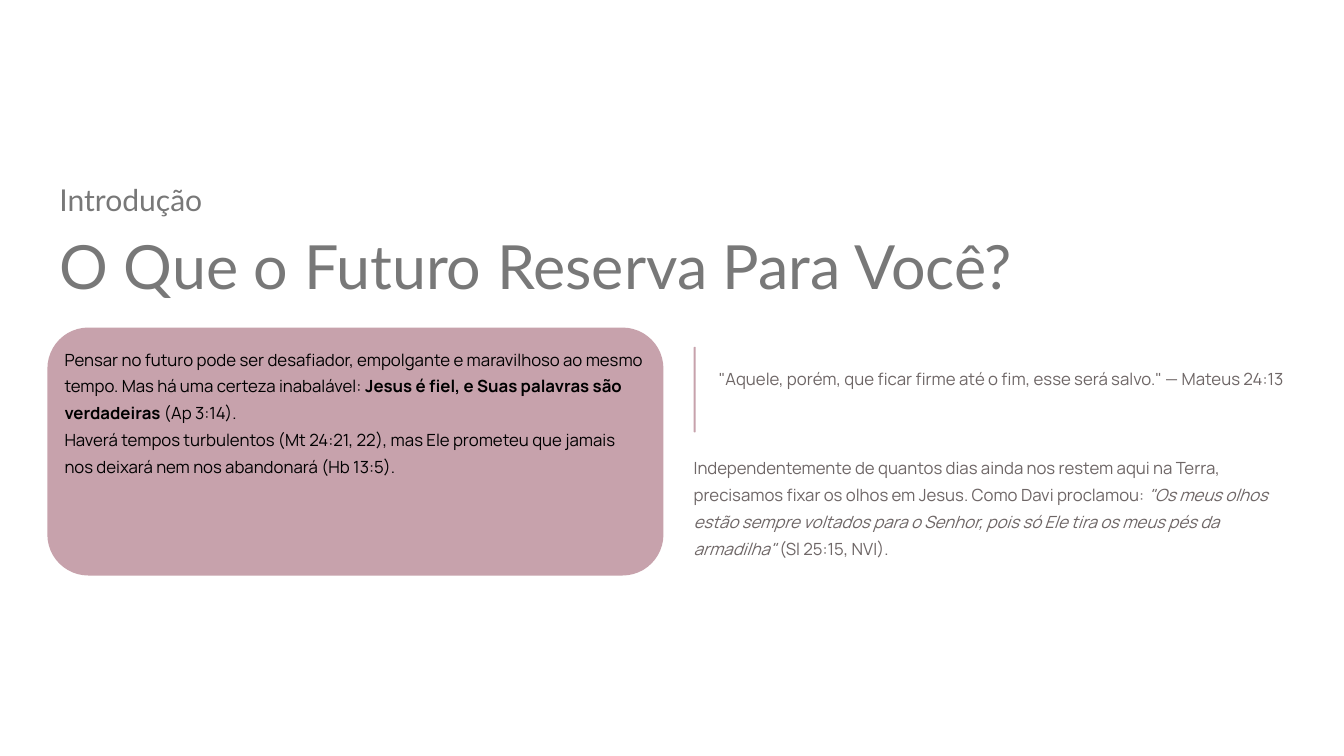
"""Build the introduction slide about what the future holds."""
from pptx import Presentation
from pptx.dml.color import RGBColor
from pptx.enum import shapes, text
from pptx.util import Inches, Pt

WHITE = RGBColor(0xFF, 0xFF, 0xFF)
BLACK = RGBColor(0x00, 0x00, 0x00)
ROSE = RGBColor(0xC7, 0xA2, 0xAC)
HEADING_GRAY = RGBColor(0x78, 0x78, 0x78)
BODY_GRAY = RGBColor(0x6E, 0x66, 0x66)

FRAME_FORMAT = {
    "margin_left": 0, "margin_top": 0, "margin_right": 0, "margin_bottom": 0,
    "word_wrap": True, "auto_size": text.MSO_AUTO_SIZE.NONE,
    "vertical_anchor": text.MSO_ANCHOR.TOP,
}
BODY_FONT = {"name": "Manrope", "size": Pt(12)}

CARD_PARAGRAPHS = [
    [("Pensar no futuro pode ser desafiador, empolgante e maravilhoso ao mesmo "
      "tempo. Mas há uma certeza inabalável: ", {}),
     ("Jesus é fiel, e Suas palavras são verdadeiras", {"bold": True}),
     (" (Ap 3:14).", {})],
    [("Haverá tempos turbulentos (Mt 24:21, 22), mas Ele prometeu que jamais "
      "nos deixará nem nos abandonará (Hb 13:5).", {})],
]
QUOTE_PARAGRAPHS = [
    [('"Aquele, porém, que ficar firme até o fim, esse será salvo." '
      "— Mateus 24:13", {})],
]
CLOSING_PARAGRAPHS = [
    [("Independentemente de quantos dias ainda nos restem aqui na Terra, "
      "precisamos fixar os olhos em Jesus. Como Davi proclamou: ", {}),
     ('"Os meus olhos estão sempre voltados para o Senhor, pois só Ele tira '
      'os meus pés da armadilha"', {"italic": True}),
     (" (Sl 25:15, NVI).", {})],
]


def apply_format(target, values):
    """Set each named attribute on the target."""
    for name, value in values.items():
        setattr(target, name, value)


def box(left, top, width, height):
    """Convert a box in inches to lengths."""
    return [Inches(value) for value in (left, top, width, height)]


def write_text(shape, paragraphs, font, color, line_spacing):
    """Fill a shape with left-aligned paragraphs of formatted runs."""
    frame = shape.text_frame
    apply_format(frame, FRAME_FORMAT)
    for index, runs in enumerate(paragraphs):
        paragraph = frame.add_paragraph() if index else frame.paragraphs[0]
        apply_format(paragraph, {"alignment": text.PP_ALIGN.LEFT,
                                 "line_spacing": line_spacing,
                                 "space_before": Pt(0)})
        for words, emphasis in runs:
            run = paragraph.add_run()
            run.text = words
            apply_format(run.font, {**font, **emphasis})
            run.font.color.rgb = color


def add_title(slide, words, position):
    """Place and format the title placeholder."""
    title = slide.shapes.title
    apply_format(title, dict(zip(("left", "top", "width", "height"), box(*position))))
    write_text(title, [[(words, {})]], {"name": "Lato", "size": Pt(43.5)},
               HEADING_GRAY, 1.04)


def add_text(slide, position, paragraphs, font=BODY_FONT, color=BODY_GRAY,
             line_spacing=1.33):
    """Add a text box."""
    shape = slide.shapes.add_textbox(*box(*position))
    write_text(shape, paragraphs, font, color, line_spacing)


def add_rounded_block(slide, position, rounding):
    """Add a plain rose block with rounded corners."""
    shape = slide.shapes.add_shape(
        shapes.MSO_SHAPE.ROUNDED_RECTANGLE, *box(*position))
    shape.adjustments[0] = rounding
    shape.fill.solid()
    shape.fill.fore_color.rgb = ROSE
    shape.line.fill.background()
    shape.shadow.inherit = False


def main():
    """Build and save the presentation."""
    presentation = Presentation()
    apply_format(presentation, {"slide_width": Inches(13.33),
                                "slide_height": Inches(7.5)})
    slide = presentation.slides.add_slide(presentation.slide_layouts[5])
    slide.background.fill.solid()
    slide.background.fill.fore_color.rgb = WHITE

    add_text(slide, (0.59, 1.79, 3.7, 0.38), [[("Introdução", {})]],
             {"name": "Lato", "size": Pt(21.5)}, HEADING_GRAY, 1.04)
    add_title(slide, "O Que o Futuro Reserva Para Você?", (0.59, 2.24, 10.27, 0.76))
    add_rounded_block(slide, (0.47, 3.25, 6.11, 2.46), 0.165)
    add_text(slide, (0.64, 3.4, 5.77, 1.5), CARD_PARAGRAPHS, color=BLACK)
    add_rounded_block(slide, (6.88, 3.44, 0.02, 0.85), 0.5)
    add_text(slide, (7.13, 3.59, 5.62, 0.54), QUOTE_PARAGRAPHS)
    add_text(slide, (6.88, 4.48, 5.87, 1.08), CLOSING_PARAGRAPHS)
    presentation.save("out.pptx")


if __name__ == "__main__":
    main()
